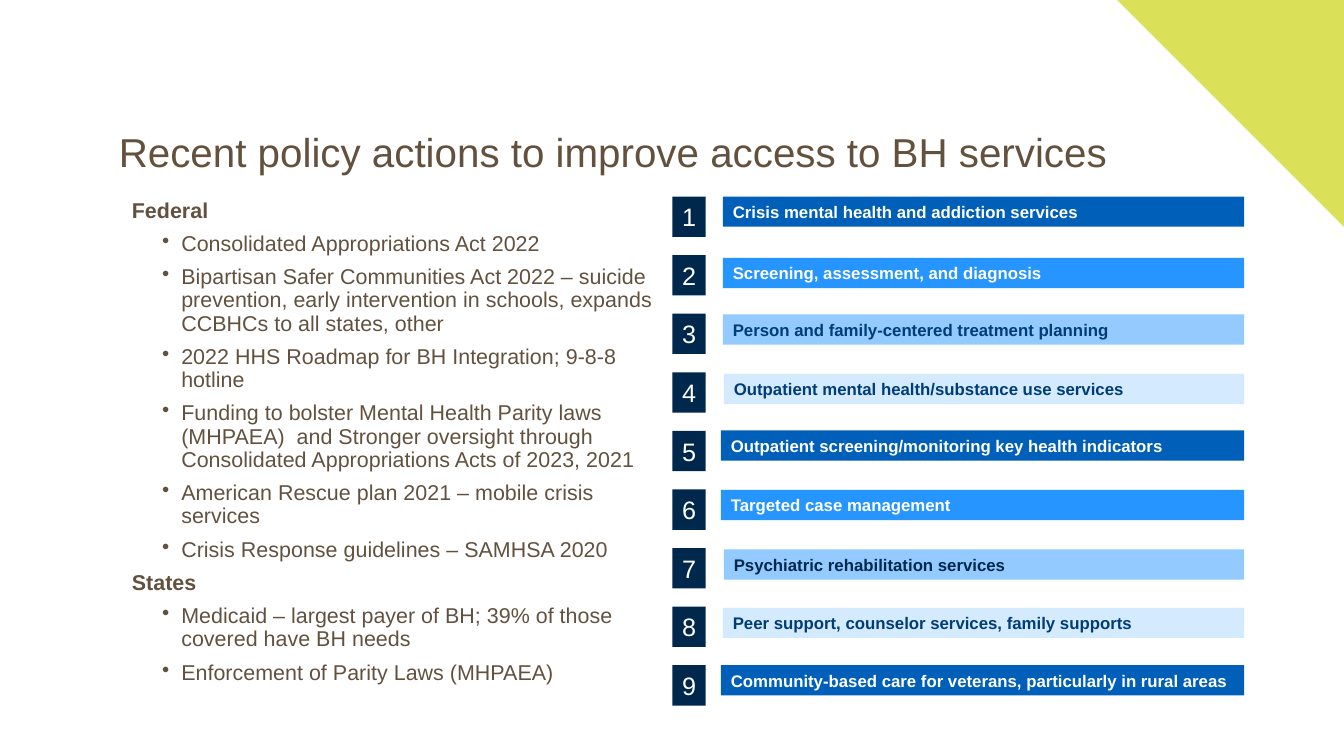
import pptx
import pptx.util
import pptx.dml.color
import pptx.enum.shapes
import pptx.enum.text
import pptx.oxml.ns
import lxml.etree

Inches = pptx.util.Inches
Pt = pptx.util.Pt
SHAPE = pptx.enum.shapes.MSO_SHAPE
ANCHOR = pptx.enum.text.MSO_ANCHOR
ALIGN = pptx.enum.text.PP_ALIGN

FONT = "Arial"
COLORS = {
    "lime": "DAE159", "title": "63513D", "body": "63513F", "white": "FFFFFF",
    "navy": "00274C", "ink": "003D77",
    "strong": "005FB8", "bright": "2695FF", "soft": "93CAFF", "pale": "D4EAFF",
}

TITLE = "Recent policy actions to improve access to BH services"
POLICIES = {
    "Federal": [
        "Consolidated Appropriations Act 2022",
        "Bipartisan Safer Communities Act 2022 – suicide prevention, early "
        "intervention in schools, expands CCBHCs to all states, other",
        "2022 HHS Roadmap for BH Integration; 9-8-8 hotline",
        "Funding to bolster Mental Health Parity laws (MHPAEA)  and Stronger "
        "oversight through Consolidated Appropriations Acts of 2023, 2021",
        "American Rescue plan 2021 – mobile crisis services",
        "Crisis Response guidelines – SAMHSA 2020",
    ],
    "States": [
        "Medicaid – largest payer of BH; 39% of those covered have BH needs",
        "Enforcement of Parity Laws (MHPAEA)",
    ],
}
# service, bar left, bar top, text color
SERVICES = [
    ("Crisis mental health and addiction services", 7.17, 1.95, "white"),
    ("Screening, assessment, and diagnosis", 7.17, 2.56, "white"),
    ("Person and family-centered treatment planning", 7.17, 3.12, "ink"),
    ("Outpatient mental health/substance use services", 7.18, 3.71, "ink"),
    ("Outpatient screening/monitoring key health indicators", 7.15, 4.27, "white"),
    ("Targeted case management", 7.15, 4.86, "white"),
    ("Psychiatric rehabilitation services", 7.18, 5.45, "navy"),
    ("Peer support, counselor services, family supports", 7.17, 6.03, "ink"),
    ("Community-based care for veterans, particularly in rural areas", 7.15, 6.6, "white"),
]
BAR_FILLS = ["strong", "bright", "soft", "pale"]
BAR_RIGHT, BAR_HEIGHT = 12.34, 0.3
NUMBER_LEFT, NUMBER_TOP, NUMBER_WIDTH, NUMBER_HEIGHT = 6.67, 1.95, 0.33, 0.4
NUMBER_LAST_TOP = 6.6


def style(paragraph, size, color, bold=False):
    for run in paragraph.runs:
        run.font.name = FONT
        run.font.size = Pt(size)
        run.font.bold = bold
        run.font.color.rgb = pptx.dml.color.RGBColor.from_string(COLORS[color])


def add_block(slide, kind, left, top, width, height, fill):
    block = slide.shapes.add_shape(
        kind, Inches(left), Inches(top), Inches(width), Inches(height))
    block.shadow.inherit = False
    block.fill.solid()
    block.fill.fore_color.rgb = pptx.dml.color.RGBColor.from_string(COLORS[fill])
    block.line.fill.background()
    return block


def add_label(block, text, size, color, align, bold=False):
    frame = block.text_frame
    frame.word_wrap = True
    frame.vertical_anchor = ANCHOR.MIDDLE
    frame.text = text
    frame.paragraphs[0].alignment = align
    style(frame.paragraphs[0], size, color, bold)


def add_text_frame(slide, left, top, width, height):
    frame = slide.shapes.add_textbox(
        Inches(left), Inches(top), Inches(width), Inches(height)).text_frame
    frame.word_wrap = True
    return frame


def add_bullet(paragraph):
    properties = paragraph._p.get_or_add_pPr()
    properties.set("marL", str(Inches(0.49)))
    properties.set("indent", str(Inches(-0.19)))
    properties.set("lvl", "1")
    bullet = lxml.etree.SubElement(properties, pptx.oxml.ns.qn("a:buChar"))
    bullet.set("char", "•")


def main():
    deck = pptx.Presentation()
    deck.slide_width, deck.slide_height = Inches(13.33), Inches(7.5)
    slide = deck.slides.add_slide(deck.slide_layouts[6])

    # Corner triangle
    corner = add_block(slide, SHAPE.RIGHT_TRIANGLE, 11.08, 0, 2.25, 2.25, "lime")
    corner.rotation = 180

    # Title
    title = add_text_frame(slide, 1.08, 1.08, 10.25, 0.85)
    title.vertical_anchor = ANCHOR.MIDDLE
    title.text = TITLE
    style(title.paragraphs[0], 28.8, "title")

    # Policy list
    policies = add_text_frame(slide, 1.21, 1.93, 5.46, 4.82)
    lines = []
    for level, actions in POLICIES.items():
        lines.append((level, True))
        lines += [(action, False) for action in actions]
    for index, (text, heading) in enumerate(lines):
        line = policies.add_paragraph() if index else policies.paragraphs[0]
        line.text = text
        line.line_spacing = 0.9
        line.space_after = Pt(7.3)
        if not heading:
            add_bullet(line)
        style(line, 15.3, "body", heading)

    # Numbered services
    step = (NUMBER_LAST_TOP - NUMBER_TOP) / (len(SERVICES) - 1)
    for index, (service, left, top, color) in enumerate(SERVICES):
        number = add_block(slide, SHAPE.RECTANGLE, NUMBER_LEFT, NUMBER_TOP + index * step,
                           NUMBER_WIDTH, NUMBER_HEIGHT, "navy")
        number.text_frame.margin_left = number.text_frame.margin_right = 0
        add_label(number, str(index + 1), 18, "white", ALIGN.CENTER)
        bar = add_block(slide, SHAPE.RECTANGLE, left, top, BAR_RIGHT - left, BAR_HEIGHT,
                        BAR_FILLS[index % len(BAR_FILLS)])
        add_label(bar, service, 12, color, ALIGN.LEFT, True)

    deck.save("out.pptx")


if __name__ == "__main__":
    main()
